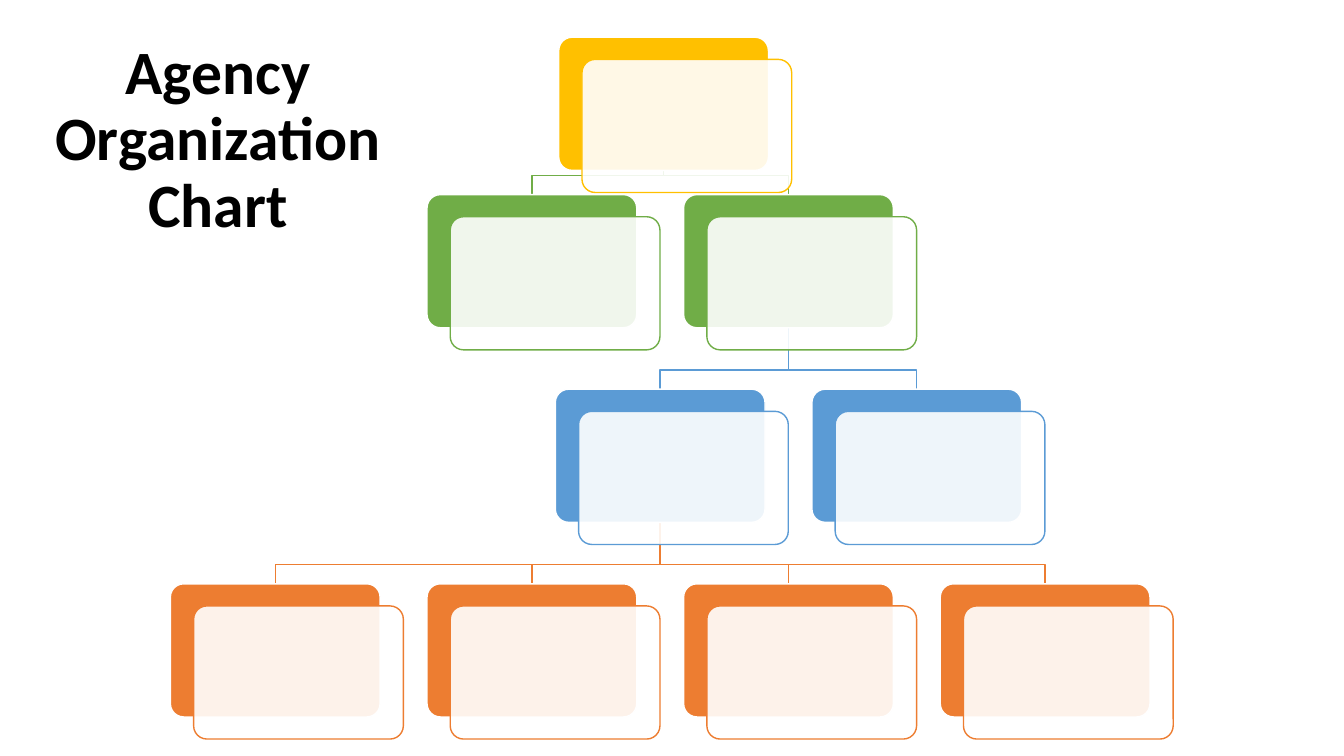
from lxml.etree import SubElement
from pptx import Presentation
from pptx.dml.color import RGBColor
from pptx.enum.shapes import MSO_SHAPE
from pptx.enum.text import MSO_ANCHOR, MSO_AUTO_SIZE, PP_ALIGN
from pptx.oxml.ns import qn
from pptx.util import Pt

BLACK = RGBColor(0x00, 0x00, 0x00)
WHITE = RGBColor(0xFF, 0xFF, 0xFF)
GOLD = RGBColor(0xFF, 0xC0, 0x00)
GREEN = RGBColor(0x70, 0xAD, 0x47)
BLUE = RGBColor(0x5B, 0x9B, 0xD5)
ORANGE = RGBColor(0xED, 0x7D, 0x31)

BOX_WIDTH, BOX_HEIGHT = 149.8, 95.1
CARD_SHIFT_X, CARD_SHIFT_Y = 16.6, 15.8
FIRST_CENTER, COLUMN_STEP = 196.6, 183.3
ROW_STEP = 139
BRANCH_GAP = 13.8  # from the horizontal branch down to the lower box


def column_center(column):
    return FIRST_CENTER + column * COLUMN_STEP


HEAD = (474, 26.6)
DIVISIONS = [(column_center(column), ROW_STEP) for column in (1, 2)]
DEPARTMENTS = [(column_center(column), 2 * ROW_STEP) for column in (1.5, 2.5)]
TEAMS = [(column_center(column), 3 * ROW_STEP) for column in range(4)]

LEVELS = [
    (GOLD, [HEAD]),
    (GREEN, DIVISIONS),
    (BLUE, DEPARTMENTS),
    (ORANGE, TEAMS),
]
BRANCHES = [
    (GREEN, HEAD, DIVISIONS),
    (BLUE, DIVISIONS[1], DEPARTMENTS),
    (ORANGE, DEPARTMENTS[0], TEAMS),
]


def add_title(slide, text):
    title = slide.shapes.title
    title.left, title.top, title.width, title.height = Pt(6), Pt(12), Pt(299.5), Pt(177)
    frame = title.text_frame
    frame.text = text
    frame.word_wrap = True
    frame.auto_size = MSO_AUTO_SIZE.NONE
    frame.vertical_anchor = MSO_ANCHOR.MIDDLE
    paragraph = frame.paragraphs[0]
    paragraph.alignment = PP_ALIGN.CENTER
    paragraph.line_spacing = 0.9
    font = paragraph.runs[0].font
    font.name, font.size, font.bold = "Calibri", Pt(44), True
    font.color.rgb = BLACK


def add_branch(slide, parent, child, color):
    """Draw a stepped line from the bottom of one box to the top of another."""
    parent_x, parent_top = parent
    child_x, child_top = child
    branch_y = child_top - BRANCH_GAP
    builder = slide.shapes.build_freeform(Pt(parent_x), Pt(parent_top + BOX_HEIGHT))
    corners = [(parent_x, branch_y), (child_x, branch_y), (child_x, child_top)]
    builder.add_line_segments([(Pt(x), Pt(y)) for x, y in corners], close=False)
    branch = builder.convert_to_shape()
    branch.shadow.inherit = False
    branch.fill.background()
    branch.line.color.rgb = color
    branch.line.width = Pt(1)


def add_rounded_box(slide, left, top, fill_color, line_color):
    box = slide.shapes.add_shape(
        MSO_SHAPE.ROUNDED_RECTANGLE, Pt(left), Pt(top), Pt(BOX_WIDTH), Pt(BOX_HEIGHT)
    )
    box.adjustments[0] = 0.1
    box.shadow.inherit = False
    box.fill.solid()
    box.fill.fore_color.rgb = fill_color
    box.line.color.rgb = line_color
    box.line.width = Pt(1)
    return box


def set_opacity(shape, percent):
    color = shape.fill._xPr.find(qn("a:solidFill"))[0]
    SubElement(color, qn("a:alpha")).set("val", str(percent * 1000))


def add_position(slide, center, top, color):
    """Draw a coloured box with a translucent white card in front of it."""
    left = center - BOX_WIDTH / 2
    add_rounded_box(slide, left, top, color, WHITE)
    card = add_rounded_box(slide, left + CARD_SHIFT_X, top + CARD_SHIFT_Y, WHITE, color)
    set_opacity(card, 90)


def main():
    presentation = Presentation()
    presentation.slide_width, presentation.slide_height = Pt(960), Pt(540)
    slide = presentation.slides.add_slide(presentation.slide_layouts[5])
    add_title(slide, "Agency Organization Chart")
    for color, parent, children in BRANCHES:
        for child in children:
            add_branch(slide, parent, child, color)
    for color, positions in LEVELS:
        for center, top in positions:
            add_position(slide, center, top, color)
    presentation.save("out.pptx")


if __name__ == "__main__":
    main()
